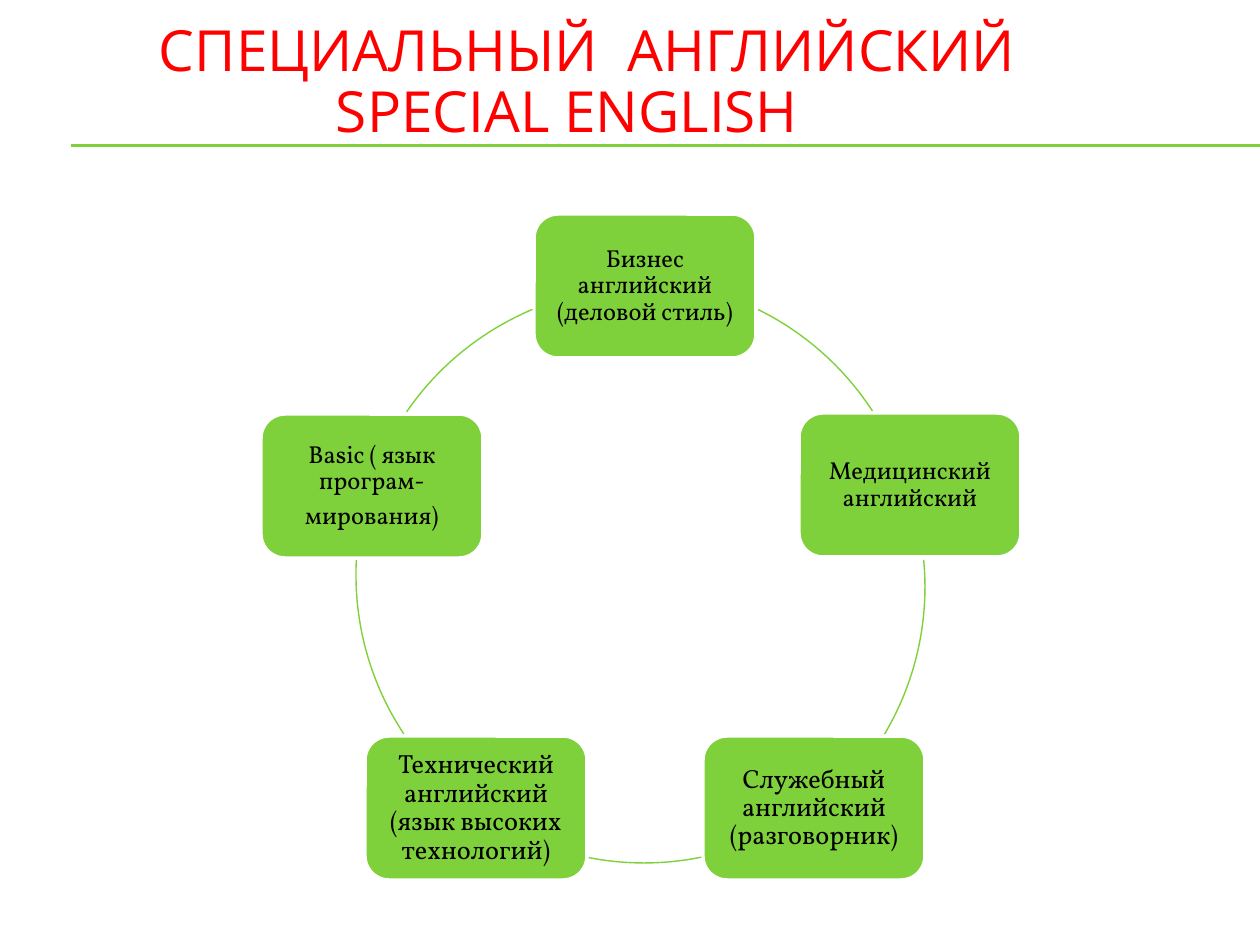
from lxml.etree import SubElement
from pptx import Presentation
from pptx.dml.color import RGBColor as Rgb
from pptx.enum.shapes import MSO_CONNECTOR as Conn, MSO_SHAPE as Kind
from pptx.enum.text import MSO_ANCHOR as Anchor, MSO_AUTO_SIZE as Fit, PP_ALIGN as Align
from pptx.oxml.ns import qn
from pptx.util import Pt

SCALE = 914400 // 126  # EMU in one px
HUES = {"green": "7FD13B", "white": "FFFFFF", "red": "FF0000", "black": "000000"}
BOX_W, BOX_H = 222, 144
RING = 576  # diameter of the arcs

# left, top, text size, paragraphs
TOPICS = [
    (534, 214, 14, ["Бизнес английский (деловой стиль)"]),
    (799, 413, 14, ["Медицинский английский"]),
    (703, 736, 15, ["Служебный английский (разговорник)"]),
    (365, 736, 15, ["Технический английский (язык высоких технологий)"]),
    (261, 414, 14, ["Basic ( язык програм-", "мирования)"]),
]
# left, top, start angle, end angle (clockwise from the right)
ARCS = [
    (343, 280, 296.2, 327.2),
    (349, 299, 354.6, 30.7),
    (356, 287, 78.5, 101.5),
    (356, 287, 146.5, 183.1),
    (356, 287, 214.5, 247.2),
]


def px(num):
    return num * SCALE


def hue(name):
    return Rgb.from_string(HUES[name])


def put_text(shape, lines, size, font, color, align=Align.CENTER, inset=8,
             after=0, indents=()):
    frame = shape.text_frame
    frame.word_wrap = True
    frame.auto_size = Fit.NONE
    frame.vertical_anchor = Anchor.MIDDLE
    frame.margin_left = frame.margin_right = px(inset)
    frame.margin_top = frame.margin_bottom = px(min(inset, 8))
    for i, line in enumerate(lines):
        para = frame.paragraphs[0] if i == 0 else frame.add_paragraph()
        para.text = line
        para.alignment = align
        para.line_spacing = 0.9
        para.space_before, para.space_after = Pt(0), Pt(after)
        if indents:
            props = para._p.get_or_add_pPr()
            props.set("marL", str(px(indents[i])))
            props.set("indent", "0")
        for run in para.runs:
            run.font.size, run.font.name = Pt(size), font
            run.font.color.rgb = hue(color)


def add_rule(slide, top):
    rule = slide.shapes.add_connector(Conn.STRAIGHT, px(71), px(top), px(1260), px(top))
    rule.line.color.rgb = hue("green")
    rule.line.width = Pt(0.75)
    SubElement(rule._element.spPr, qn("a:effectLst"))


def add_topic(slide, left, top, size, lines):
    box = slide.shapes.add_shape(Kind.ROUNDED_RECTANGLE, px(left), px(top),
                                 px(BOX_W), px(BOX_H))
    box.shadow.inherit = False
    box.fill.solid()
    box.fill.fore_color.rgb = hue("green")
    box.line.color.rgb = hue("white")
    box.line.width = Pt(2)
    put_text(box, lines, size, "Vollkorn", "black", after=5)


def add_arc(slide, left, top, start, end):
    arc = slide.shapes.add_shape(Kind.ARC, px(left), px(top), px(RING), px(RING))
    arc.shadow.inherit = False
    arc.fill.background()
    arc.line.color.rgb = hue("green")
    arc.line.width = Pt(0.79)
    # One degree is 60000 units, and adjustments count in 100000
    arc.adjustments[0], arc.adjustments[1] = start * 0.6, end * 0.6


def main():
    deck = Presentation()
    deck.slide_width, deck.slide_height = px(1260), px(945)
    slide = deck.slides.add_slide(deck.slide_layouts[5])

    # Title over a double rule
    title = slide.shapes.title
    title.left, title.top, title.width, title.height = map(px, (63, 26, 1197, 116))
    put_text(title, ["СПЕЦИАЛЬНЫЙ  АНГЛИЙСКИЙ", "SPECIAL ENGLISH"], 32.4, "Open Sans",
             "red", align=Align.LEFT, inset=13, indents=(83, 260))
    for top in (145, 146):
        add_rule(slide, top)

    # Ring of topics
    for topic, arc in zip(TOPICS, ARCS):
        add_topic(slide, *topic)
        add_arc(slide, *arc)

    deck.save("out.pptx")


if __name__ == "__main__":
    main()
